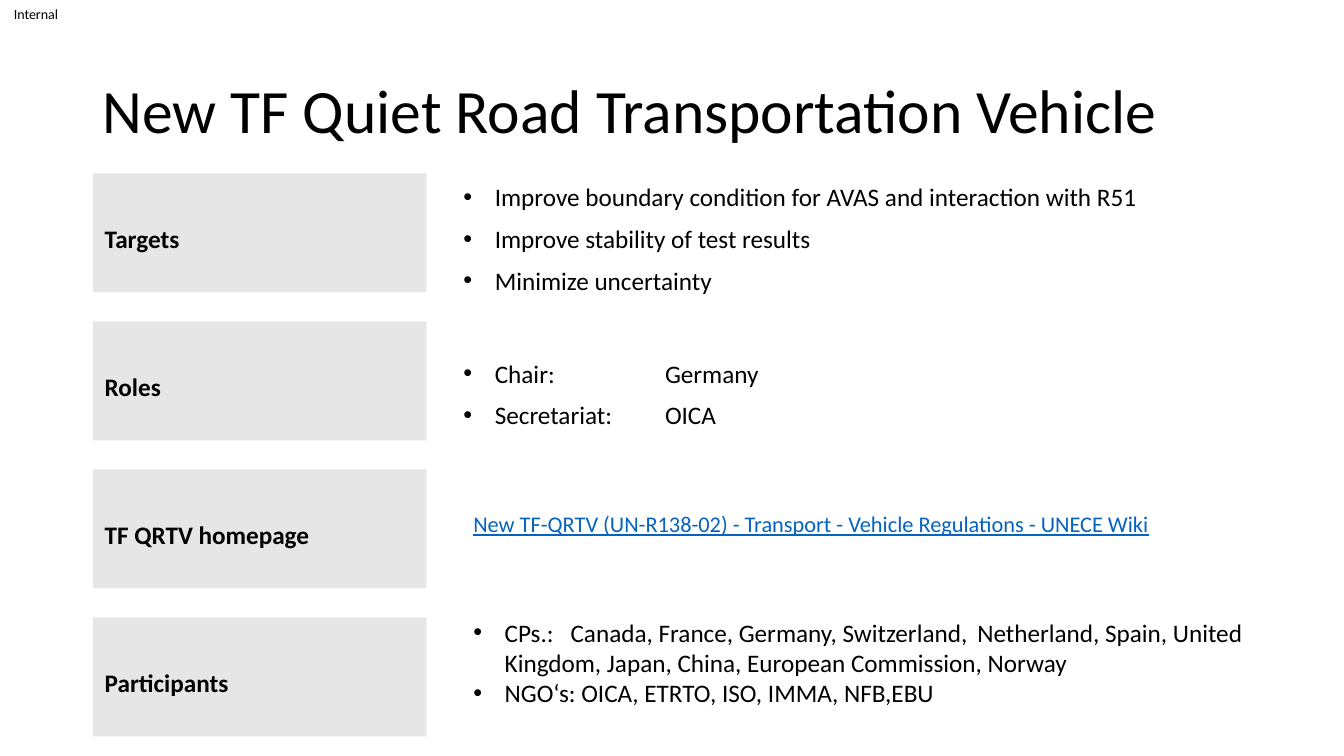
from dataclasses import dataclass

from lxml.etree import SubElement
from pptx import Presentation
from pptx.dml.color import RGBColor
from pptx.enum.shapes import MSO_SHAPE as Geo
from pptx.enum.text import MSO_ANCHOR as Anchor, MSO_AUTO_SIZE as Fit, PP_ALIGN as Align
from pptx.oxml.ns import qn
from pptx.slide import Slide
from pptx.text.text import TextFrame, _Paragraph as Para
from pptx.util import Cm, Pt

BLACK, GREY, BLUE = "000000", "E7E6E6", "0563C1"
LEFT, TOP, PITCH = 2.34, 4.37, 3.73
WIDTH, HEIGHT = 8.41, 3.0
NOTE_X, HANG = 11.68, 0.79
LEAD = 0.21  # extra top inset that lowers centred text


@dataclass
class Note:
    top: float
    width: float
    height: float
    lines: list[str]
    inset: tuple[float, float, float, float] = (0, LEAD, 0, 0)
    anchor: Anchor = Anchor.MIDDLE
    size: int = 18
    color: str = BLACK
    bullet: bool = True
    link: bool = False
    space: float = 1.1
    gap: int = 6
    tabs: tuple[float, ...] = ()


PAD = (0.25, 0.13, 0.25, 0.13)
LABELS = ["Targets", "Roles", "TF QRTV homepage", "Participants"]
NOTES = [
    Note(4.06, 18.87, 3.61, [
        "Improve boundary condition for AVAS and interaction with R51",
        "Improve stability of test results",
        "Minimize uncertainty",
    ]),
    Note(7.98, 17.22, 3.61, ["Chair:\tGermany", "Secretariat:\tOICA"], tabs=(5.08,)),
    Note(12.73, 17.93, 0.94, [
        "New TF-QRTV (UN-R138-02) - Transport - Vehicle Regulations - UNECE Wiki",
    ], PAD, Anchor.TOP, 16, BLUE, bullet=False, link=True, space=1, gap=0),
    Note(15.42, 19.91, 2.57, [
        "CPs.:\tCanada, France, Germany, Switzerland,\tNetherland, Spain, "
        "United Kingdom, Japan, China, European Commission, Norway",
        "NGO‘s: OICA, ETRTO, ISO, IMMA, NFB,EBU",
    ], PAD, Anchor.TOP, space=1, gap=0, tabs=(2.45, 12.7)),
]


def rgb(code: str) -> RGBColor:
    return RGBColor.from_string(code)


def add_run(para: Para, text: str, size: int, color: str = BLACK,
            bold: bool = False, under: bool = False) -> None:
    run = para.add_run()
    run.text = text
    font = run.font
    font.name, font.size, font.bold = "Calibri", Pt(size), bold
    font.color.rgb = rgb(color)
    if under:
        font.underline = True


def set_frame(frame: TextFrame, inset: tuple[float, ...], anchor: Anchor) -> None:
    frame.word_wrap = True
    frame.auto_size = Fit.NONE
    frame.vertical_anchor = anchor
    (frame.margin_left, frame.margin_top,
     frame.margin_right, frame.margin_bottom) = map(Cm, inset)


def set_list(para: Para, bullet: bool, tabs: tuple[float, ...]) -> None:
    """Give a paragraph its hanging bullet and tab stops."""
    props = para._p.get_or_add_pPr()
    if bullet:
        props.set("marL", str(Cm(HANG)))
        props.set("indent", str(-Cm(HANG)))
        SubElement(props, qn("a:buFont"), typeface="Arial")
        SubElement(props, qn("a:buChar"), char="•")
    if tabs:
        stops = SubElement(props, qn("a:tabLst"))
        for pos in tabs:
            SubElement(stops, qn("a:tab"), pos=str(Cm(pos)), algn="l")


def add_label(slide: Slide, row: int, text: str) -> None:
    box = slide.shapes.add_shape(
        Geo.RECTANGLE, Cm(LEFT), Cm(TOP + row * PITCH), Cm(WIDTH), Cm(HEIGHT))
    box.shadow.inherit = False
    box.fill.solid()
    box.fill.fore_color.rgb = rgb(GREY)
    box.line.fill.background()
    set_frame(box.text_frame, (0.3, 0.2 + LEAD, 0.3, 0.2), Anchor.MIDDLE)
    para = box.text_frame.paragraphs[0]
    para.alignment, para.line_spacing = Align.LEFT, 1.1
    add_run(para, text, 18, bold=True)


def add_note(slide: Slide, note: Note) -> None:
    box = slide.shapes.add_textbox(
        Cm(NOTE_X), Cm(note.top), Cm(note.width), Cm(note.height))
    frame = box.text_frame
    set_frame(frame, note.inset, note.anchor)
    for num, line in enumerate(note.lines):
        para = frame.add_paragraph() if num else frame.paragraphs[0]
        set_list(para, note.bullet, note.tabs)
        para.line_spacing = note.space
        if num:
            para.space_before = Pt(note.gap)
        add_run(para, line, note.size, note.color, under=note.link)


def add_title(slide: Slide) -> None:
    title = slide.shapes.title
    title.left, title.top, title.width, title.height = map(Cm, (LEFT, 1.01, 29.21, 3.68))
    set_frame(title.text_frame, PAD, Anchor.MIDDLE)
    para = title.text_frame.paragraphs[0]
    para.alignment, para.line_spacing = Align.LEFT, 0.9
    add_run(para, "New TF Quiet Road Transportation Vehicle", 44)


def add_mark(slide: Slide) -> None:
    """Put the class of the document in the top left corner."""
    box = slide.shapes.add_textbox(0, 0, Cm(1.85), Cm(0.71))
    set_frame(box.text_frame, (0.35, 0, 0, 0), Anchor.MIDDLE)
    add_run(box.text_frame.paragraphs[0], "Internal", 10)


def main() -> None:
    deck = Presentation()
    deck.slide_width, deck.slide_height = Cm(33.87), Cm(19.05)
    slide = deck.slides.add_slide(deck.slide_layouts[5])
    add_mark(slide)
    add_title(slide)
    for row, text in enumerate(LABELS):
        add_label(slide, row, text)
    for note in NOTES:
        add_note(slide, note)
    deck.save("out.pptx")


if __name__ == "__main__":
    main()
